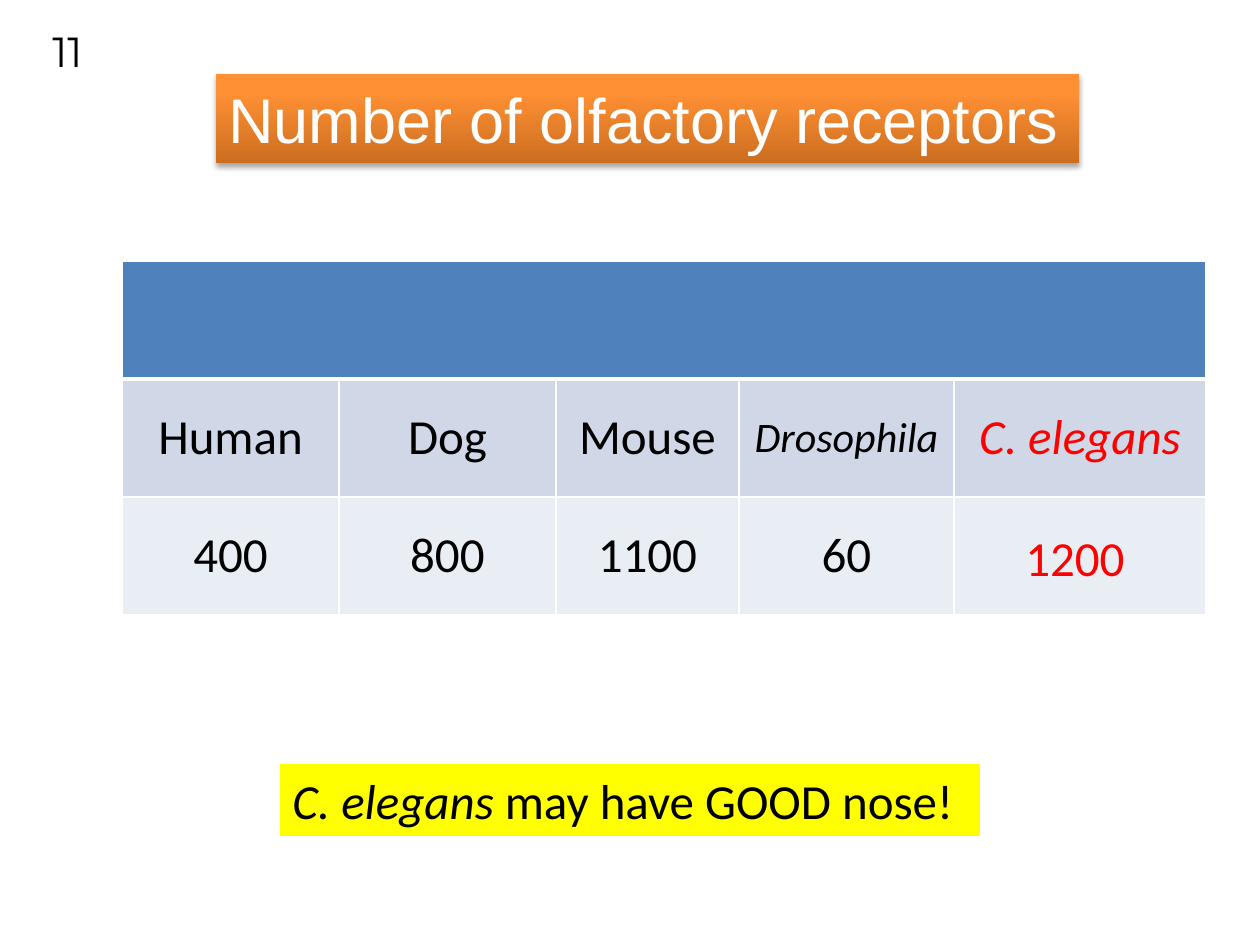
from copy import deepcopy

from pptx import Presentation
from pptx.dml.color import RGBColor
from pptx.enum.shapes import MSO_SHAPE as SHAPE
from pptx.enum.text import MSO_ANCHOR as ANCHOR, PP_ALIGN as ALIGN
from pptx.oxml import parse_xml
from pptx.oxml.ns import nsdecls
from pptx.util import Pt

SCALE = 914400 / 126
BLACK, WHITE, RED = "000000", "FFFFFF", "FF0000"


def px(n):
    return round(n * SCALE)


def box_emu(box):
    return [px(n) for n in box]


def rgb(value):
    return RGBColor.from_string(value)


def add_run(p, text, size, color=BLACK, font="Calibri", italic=False):
    r = p.add_run()
    r.text = text
    r.font.size = Pt(size)
    r.font.name = font
    r.font.italic = italic
    r.font.color.rgb = rgb(color)


def set_text(tf, runs, align=ALIGN.LEFT, anchor=ANCHOR.TOP, wrap=False):
    tf.word_wrap = wrap
    tf.vertical_anchor = anchor
    p = tf.paragraphs[0]
    p.alignment = align
    for run in runs:
        add_run(p, *run)


def add_rect(slide, box):
    sp = slide.shapes.add_shape(SHAPE.RECTANGLE, *box_emu(box))
    sp.shadow.inherit = False
    sp.line.fill.background()
    return sp


def add_title(slide, box):
    sp = add_rect(slide, box)
    sp.fill.gradient()
    sp.fill.gradient_angle = 90
    gs_list = sp.fill.gradient_stops
    last = sp._element.spPr.xpath(".//a:gs")[-1]
    last.addnext(deepcopy(last))
    gs_list = sp.fill.gradient_stops
    stops = [(0, "CC6E20"), (0.8, "FF9034"), (1, "FF9136")]
    for gs, (position, color) in zip(gs_list, stops):
        gs.position = position
        gs.color.rgb = rgb(color)
    effects = sp._element.spPr.xpath("a:effectLst")[0]
    effects.append(parse_xml(
        f'<a:outerShdw {nsdecls("a")} blurRad="{Pt(3.1)}" dist="{Pt(1.8)}" '
        f'dir="5400000" rotWithShape="0"><a:srgbClr val="{BLACK}">'
        '<a:alpha val="35000"/></a:srgbClr></a:outerShdw>'))
    set_text(sp.text_frame, [("Number of olfactory receptors", 36, WHITE, "Arial")])


def style_cell(cell, fill, top=1, bottom=1):
    tcPr = cell._tc.get_or_add_tcPr()
    for side, width in zip("LRTB", (1, 1, top, bottom)):
        tcPr.append(parse_xml(
            f'<a:ln{side} {nsdecls("a")} w="{Pt(width)}"><a:solidFill>'
            f'<a:srgbClr val="{WHITE}"/></a:solidFill></a:ln{side}>'))
    cell.fill.solid()
    cell.fill.fore_color.rgb = rgb(fill)
    cell.vertical_anchor = ANCHOR.MIDDLE


def add_receptor_table(slide, box):
    widths = [217, 217, 183, 215, 252]
    names = [("Human", 28), ("Dog", 28), ("Mouse", 28),
             ("Drosophila", 24, BLACK, "Calibri", True),
             ("C. elegans", 28, RED, "Calibri", True)]
    counts = [(n, 28) for n in ("400", "800", "1100", "60")]
    rows = [("4F81BD", 1, 3, []), ("D0D8E8", 3, 1, names), ("E9EDF4", 1, 1, counts)]
    table = slide.shapes.add_table(len(rows), len(widths), *box_emu(box)).table
    for col, width in zip(table.columns, widths):
        col.width = px(width)
    for i, (fill, top, bottom, entries) in enumerate(rows):
        for cell in table.rows[i].cells:
            style_cell(cell, fill, top, bottom)
        for j, entry in enumerate(entries):
            p = table.cell(i, j).text_frame.paragraphs[0]
            p.alignment = ALIGN.CENTER
            add_run(p, *entry)
    table.cell(0, 0).merge(table.cell(0, len(widths) - 1))


def add_conclusion(slide, box):
    sp = add_rect(slide, box)
    sp.fill.solid()
    sp.fill.fore_color.rgb = rgb("FFFF00")
    set_text(sp.text_frame, [("C. elegans", 28, BLACK, "Calibri", True),
                             (" may have GOOD nose!", 28)], anchor=ANCHOR.MIDDLE)


def add_label(slide, box, run, **layout):
    sp = slide.shapes.add_textbox(*box_emu(box))
    set_text(sp.text_frame, [run], **layout)


def main():
    prs = Presentation()
    prs.slide_width, prs.slide_height = px(1260), px(945)
    slide = prs.slides.add_slide(prs.slide_layouts[6])
    add_receptor_table(slide, (122, 261, 1084, 354))
    add_conclusion(slide, (280, 764, 700, 72))
    add_title(slide, (216, 74, 863, 89))
    add_label(slide, (1012, 521, 126, 72), ("1200", 28, RED), align=ALIGN.CENTER)
    add_label(slide, (-20, 0, 115, 101), ("11", 24, BLACK, "Montserrat"),
              align=ALIGN.RIGHT, anchor=ANCHOR.MIDDLE, wrap=True)
    prs.save("out.pptx")


if __name__ == "__main__":
    main()
